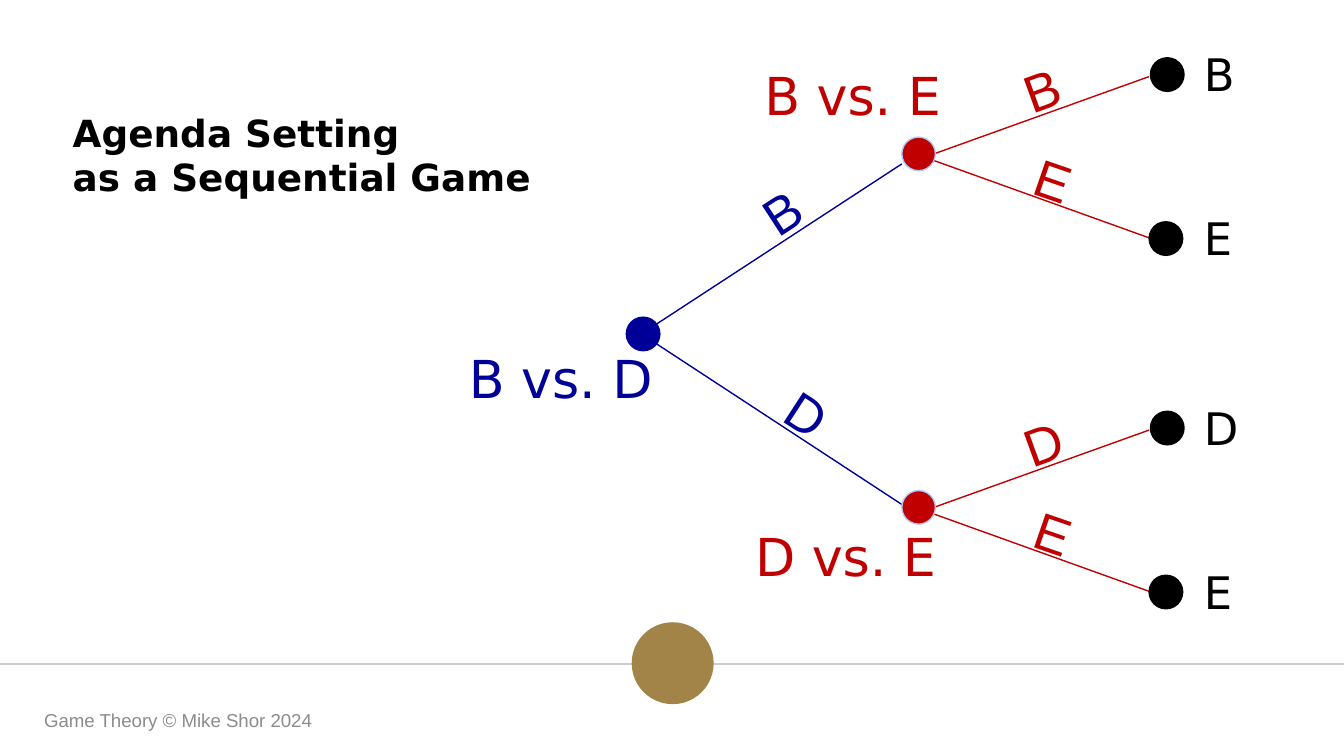
from lxml import etree
from pptx import Presentation
from pptx import util as u
from pptx.dml.color import RGBColor
from pptx.enum import shapes, text
from pptx.oxml.ns import qn

BLUE, RED, BLACK = "000099", "C00000", "000000"
GOLD, GREY, RULE, PALE = "A28448", "8C8C8C", "CCCCCC", "ACCBF9"
SANS, ARIAL = "DejaVu Sans", "Arial"
NODE = 0.25


def color(value):
    return RGBColor.from_string(value)


def set_values(target, values):
    for name, value in values.items():
        setattr(target, name, value)


def write(shape, lines, size, font_color, name=SANS, bold=False,
          align=text.PP_ALIGN.LEFT, indent=0, **frame_values):
    frame = shape.text_frame
    set_values(frame, {"word_wrap": True, **frame_values})
    frame.text = "\n".join(lines)
    for paragraph in frame.paragraphs:
        paragraph.alignment = align
        if indent:
            properties = paragraph._p.get_or_add_pPr()
            properties.set("marL", str(u.Inches(indent)))
            properties.set("indent", "0")
        for run in paragraph.runs:
            set_values(run.font, {"name": name, "size": u.Pt(size), "bold": bold})
            run.font.color.rgb = color(font_color)


def add_label(slide, left, top, width, height, words, size, font_color,
              rotation=0, **values):
    box = slide.shapes.add_textbox(*map(u.Inches, (left, top, width, height)))
    box.rotation = rotation
    write(box, [words], size, font_color, **values)


def add_line(slide, start, end, line_color):
    line = slide.shapes.add_connector(
        shapes.MSO_CONNECTOR.STRAIGHT, *map(u.Inches, (*start, *end)))
    line.line.color.rgb = color(line_color)
    line.line.width = u.Pt(0.75)
    etree.SubElement(line._element.spPr, qn("a:effectLst"))


def add_circle(slide, left, top, size, fill, outline=None):
    circle = slide.shapes.add_shape(
        shapes.MSO_SHAPE.OVAL, *map(u.Inches, (left, top, size, size)))
    circle.shadow.inherit = False
    circle.fill.solid()
    circle.fill.fore_color.rgb = color(fill)
    if outline:
        circle.line.color.rgb = color(outline)
        circle.line.width = u.Pt(0.75)
    else:
        circle.line.fill.background()


def add_second_vote(slide, top, upper, lower):
    """Red decision node with two branches; top is that of the upper outcome."""
    start = (6.88, top + 0.74)
    add_line(slide, start, (8.55, top + 0.14), RED)
    add_line(slide, start, (8.55, top + 1.34), RED)
    add_label(slide, 7.2, top - 0.08, 1.28, 0.57, upper, 28, RED,
              rotation=340, name=ARIAL, indent=0.32)
    add_label(slide, 7.28, top + 0.62, 1.1, 0.57, lower, 28, RED,
              rotation=19, name=ARIAL, indent=0.33)
    add_circle(slide, 6.71, top + 0.59, NODE, RED, PALE)
    for left, offset, outcome in ((8.56, 0, upper), (8.55, 1.22, lower)):
        add_circle(slide, left, top + offset, NODE, BLACK, BLACK)
        add_label(slide, 8.86, top + offset - 0.13, 0.64, 0.5, outcome, 24, BLACK)


def add_first_vote(slide):
    add_line(slide, (4.78, 2.48), (6.71, 1.22), BLUE)
    add_line(slide, (4.78, 2.49), (6.72, 3.76), BLUE)
    add_circle(slide, 4.66, 2.36, NODE, BLUE, BLUE)
    add_label(slide, 5.15, 1.28, 1.38, 0.57, "B", 28, BLUE,
              rotation=327, name=ARIAL, indent=0.44)
    add_label(slide, 5.72, 2.95, 1.06, 0.57, "D", 28, BLUE,
              rotation=33, name=ARIAL)


def add_title(slide):
    title = slide.shapes.title
    places = (0.44, 0.91, 4.24, 0.48)
    set_values(title, dict(zip(("left", "top", "width", "height"),
                               map(u.Inches, places))))
    margins = {f"margin_{side}": u.Inches(0.1)
               for side in ("left", "top", "right", "bottom")}
    write(title, ["Agenda Setting", "as a Sequential Game"], 20, BLACK, bold=True,
          auto_size=text.MSO_AUTO_SIZE.NONE,
          vertical_anchor=text.MSO_ANCHOR.MIDDLE, **margins)


def main():
    presentation = Presentation()
    presentation.slide_width = u.Inches(10)
    presentation.slide_height = u.Inches(10 * 9 / 16)
    slide = presentation.slides.add_slide(presentation.slide_layouts[5])
    add_title(slide)

    # Footer rule, disc and copyright line
    add_line(slide, (-0.01, 4.94), (10.01, 4.94), RULE)
    add_circle(slide, 4.7, 4.63, 0.61, GOLD)
    add_label(slide, 0.23, 5.21, 3.38, 0.3, "Game Theory © Mike Shor 2024", 10,
              GREY, name=ARIAL, vertical_anchor=text.MSO_ANCHOR.MIDDLE)

    # Game tree
    add_first_vote(slide)
    add_second_vote(slide, 0.43, "B", "E")
    add_second_vote(slide, 3.06, "D", "E")

    # Names of the votes
    add_label(slide, 3.39, 2.53, 1.72, 0.57, "B vs. D", 28, BLUE)
    add_label(slide, 5.46, 0.42, 1.64, 0.57, "B vs. E", 28, RED,
              align=text.PP_ALIGN.RIGHT)
    add_label(slide, 5.52, 3.85, 1.73, 0.57, "D vs. E", 28, RED)

    presentation.save("out.pptx")


if __name__ == "__main__":
    main()
